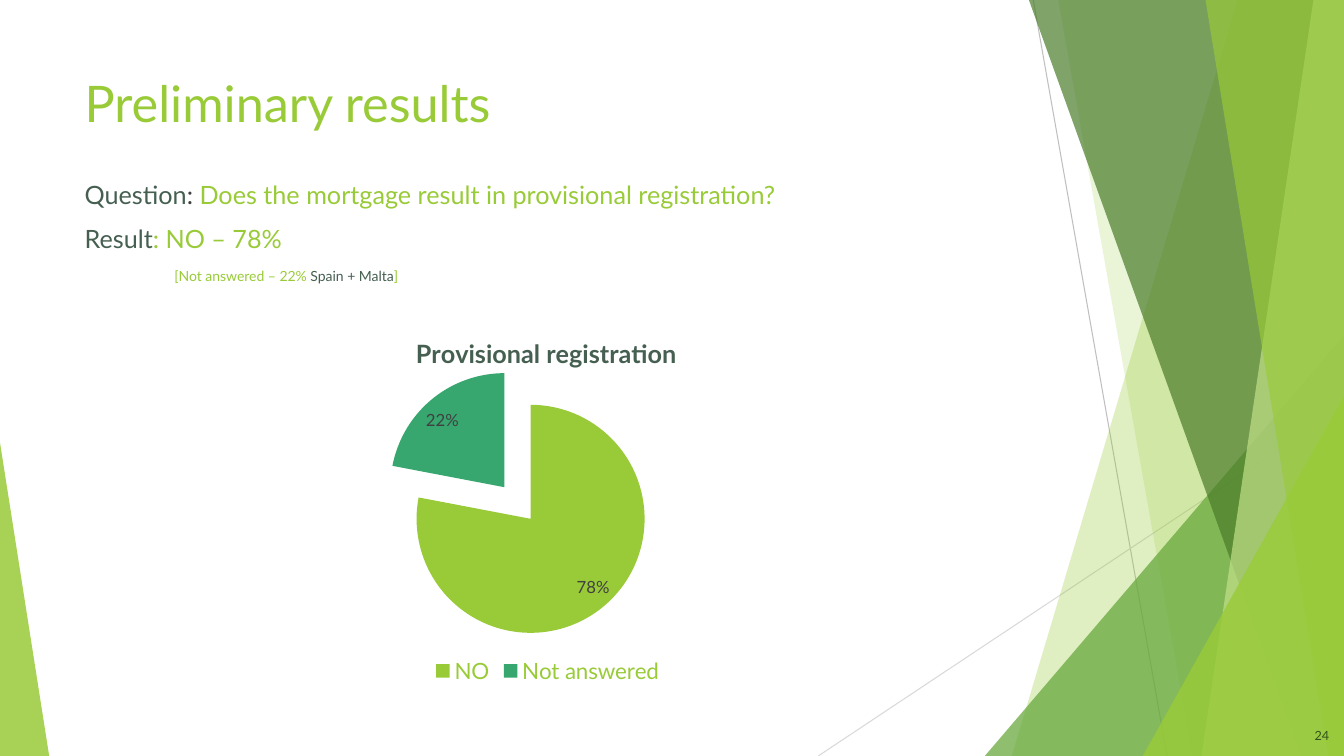
from lxml import etree
from pptx import Presentation
from pptx.chart.data import CategoryChartData
from pptx.dml.color import RGBColor
from pptx.enum.chart import XL_CHART_TYPE, XL_LABEL_POSITION, XL_LEGEND_POSITION
from pptx.enum.shapes import MSO_CONNECTOR, MSO_SHAPE
from pptx.enum.text import MSO_ANCHOR, MSO_AUTO_SIZE, PP_ALIGN
from pptx.oxml import parse_xml
from pptx.oxml.ns import nsdecls, qn
from pptx.util import Cm, Pt

PIE = XL_CHART_TYPE.PIE
BEST_FIT = XL_LABEL_POSITION.BEST_FIT
LEGEND_BOTTOM = XL_LEGEND_POSITION.BOTTOM
STRAIGHT = MSO_CONNECTOR.STRAIGHT
TRIANGLE = MSO_SHAPE.ISOSCELES_TRIANGLE
TOP, MIDDLE = MSO_ANCHOR.TOP, MSO_ANCHOR.MIDDLE
LEFT, RIGHT = PP_ALIGN.LEFT, PP_ALIGN.RIGHT
NO_FIT = MSO_AUTO_SIZE.NONE

WIDTH, HEIGHT = 33.87, 19.05
FONT = "Lato"
COLORS = {
    "lime": "99CB38", "pale": "C2E088", "green": "63A537", "forest": "4A7C29",
    "jade": "37A76F", "slate": "455F51", "text": "404040", "number": "31521C",
    "line": "BFBFBF", "faint": "D9D9D9",
}


def color(name):
    return RGBColor.from_string(COLORS[name])


def format_font(font, size, color_name, bold=False):
    for name, value in {"name": FONT, "size": Pt(size), "bold": bold}.items():
        setattr(font, name, value)
    font.color.rgb = color(color_name)


def paint(shape, color_name, opacity):
    shape.shadow.inherit = False
    shape.fill.solid()
    shape.fill.fore_color.rgb = color(color_name)
    shape.line.fill.background()
    tint = shape.element.spPr.find(qn("a:solidFill"))[0]
    etree.SubElement(tint, qn("a:alpha")).set("val", str(opacity * 1000))


def add_hairline(page, start, end, color_name):
    line = page.shapes.add_connector(STRAIGHT, *map(Cm, start + end))
    line.line.color.rgb = color(color_name)
    line.line.width = Pt(0.75)
    etree.SubElement(line.element.spPr, qn("a:effectLst"))


def add_facet(page, top_x, bottom_x, color_name, opacity):
    builder = page.shapes.build_freeform(Cm(top_x), 0)
    corners = [(WIDTH, 0), (WIDTH, HEIGHT), (bottom_x, HEIGHT)]
    builder.add_line_segments([(Cm(x), Cm(y)) for x, y in corners])
    paint(builder.convert_to_shape(), color_name, opacity)


def add_triangle(page, left, right, top, apex, color_name, opacity):
    shape = page.shapes.add_shape(
        TRIANGLE, Cm(left), Cm(top), Cm(right - left), Cm(HEIGHT - top))
    shape.adjustments[0] = apex
    paint(shape, color_name, opacity)


def add_decoration(page):
    add_hairline(page, (26.04, 0), (29.41, HEIGHT), "line")
    add_hairline(page, (WIDTH, 10.24), (20.62, HEIGHT), "faint")
    add_facet(page, 31.19, 25.5, "lime", 30)
    add_facet(page, 26.67, 30.05, "lime", 20)
    add_triangle(page, 24.82, WIDTH, 8.46, 1, "green", 72)
    add_facet(page, 25.93, 32.79, "forest", 70)
    add_facet(page, 33.1, 30.28, "pale", 70)
    add_facet(page, 30.38, 33.48, "lime", 65)
    add_triangle(page, 28.8, WIDTH, 9.98, 1, "lime", 80)
    add_triangle(page, 0, 1.24, 11.15, 0, "lime", 85)


def place(page, box, left, top, width, height, anchor=TOP):
    places = {"left": left, "top": top, "width": width, "height": height}
    for name, value in places.items():
        setattr(box, name, Cm(value))
    frame = box.text_frame
    for name, value in {"word_wrap": True, "auto_size": NO_FIT,
                        "vertical_anchor": anchor}.items():
        setattr(frame, name, value)
    page.shapes.element.append(box.element)
    return frame


def write(para, spans, size, align=LEFT, before=0):
    for name, value in {"alignment": align, "line_spacing": 1.0,
                        "space_before": Pt(before)}.items():
        setattr(para, name, value)
    for text, color_name in spans:
        span = para.add_run()
        span.text = text
        format_font(span.font, size, color_name)


def add_findings(page, box):
    frame = place(page, box, 1.88, 4.39, 24.74, 12.4)
    findings = [
        ([("Question", "slate"), (": ", "text"),
          ("Does the mortgage result in provisional registration?", "lime")], 18, 0),
        ([("Result", "slate"), (": NO – 78%", "lime")], 18, 0),
        ([("[Not answered – 22% ", "lime"), ("Spain + Malta", "slate"),
          ("]", "lime")], 10, 2.26),
    ]
    for index, (spans, size, indent) in enumerate(findings):
        para = frame.add_paragraph() if index else frame.paragraphs[0]
        write(para, spans, size, before=10 if index else 0)
        properties = para._p.get_or_add_pPr()
        properties.set("marL", "0")
        properties.set("indent", str(Cm(indent)))
        etree.SubElement(properties, qn("a:buNone"))


def manual_layout(**values):
    parts = "".join(f'<c:{name} val="{value}"/>' for name, value in values.items())
    return parse_xml(f'<c:layout {nsdecls("c")}><c:manualLayout>{parts}'
                     '</c:manualLayout></c:layout>')


def set_layout(parent, layout, previous):
    for old in parent.findall(qn("c:layout")):
        parent.remove(old)
    if previous is None:
        parent.insert(0, layout)
    else:
        previous.addnext(layout)


def add_pie(page):
    data = CategoryChartData()
    data.categories = ["NO", "Not answered"]
    data.add_series("Series 1", [78, 22])
    chart = page.shapes.add_chart(
        PIE, Cm(3.07), Cm(7.77), Cm(21.46), Cm(9.58), data).chart
    format_font(chart.font, 10, "text")

    chart.has_title = True
    para = chart.chart_title.text_frame.paragraphs[0]
    span = para.add_run()
    span.text = "Provisional registration"
    format_font(span.font, 18, "slate", True)
    title = chart.element.xpath(".//c:title")[0]
    set_layout(title, manual_layout(xMode="edge", yMode="edge", x=0.34, y=0.06),
               title.find(qn("c:tx")))
    set_layout(chart.element.xpath(".//c:plotArea")[0],
               manual_layout(layoutTarget="inner", xMode="edge", yMode="edge",
                             x=0, y=0.24, w=0.95, h=0.6), None)

    chart.has_legend = True
    chart.legend.position = LEGEND_BOTTOM
    chart.legend.include_in_layout = False
    format_font(chart.legend.font, 16, "lime")

    plot = chart.plots[0]
    plot.vary_by_categories = True
    plot.has_data_labels = True
    labels = plot.data_labels
    for name, value in {"show_percentage": True, "show_value": False,
                        "number_format": "0%", "number_format_is_linked": False,
                        "position": BEST_FIT}.items():
        setattr(labels, name, value)
    format_font(labels.font, 12, "text")

    for index, color_name in enumerate(["lime", "jade"]):
        fill = plot.series[0].points[index].format.fill
        fill.solid()
        fill.fore_color.rgb = color(color_name)
    for point, distance in zip(chart.element.xpath(".//c:dPt"), [6, 30]):
        explosion = parse_xml(f'<c:explosion {nsdecls("c")} val="{distance}"/>')
        point.find(qn("c:spPr")).addprevious(explosion)


def main():
    deck = Presentation()
    deck.slide_width, deck.slide_height = Cm(WIDTH), Cm(HEIGHT)
    page = deck.slides.add_slide(deck.slide_layouts[1])
    title, body = page.placeholders
    add_decoration(page)
    frame = place(page, title, 1.88, 1.7, 23.88, 1.91)
    write(frame.paragraphs[0], [("Preliminary results", "lime")], 36)
    add_findings(page, body)
    number = page.shapes.add_textbox(0, 0, 0, 0)
    frame = place(page, number, 31.85, 18.03, 1.9, 1.02, MIDDLE)
    write(frame.paragraphs[0], [("24", "number")], 9, RIGHT)
    add_pie(page)
    deck.save("out.pptx")


if __name__ == "__main__":
    main()
